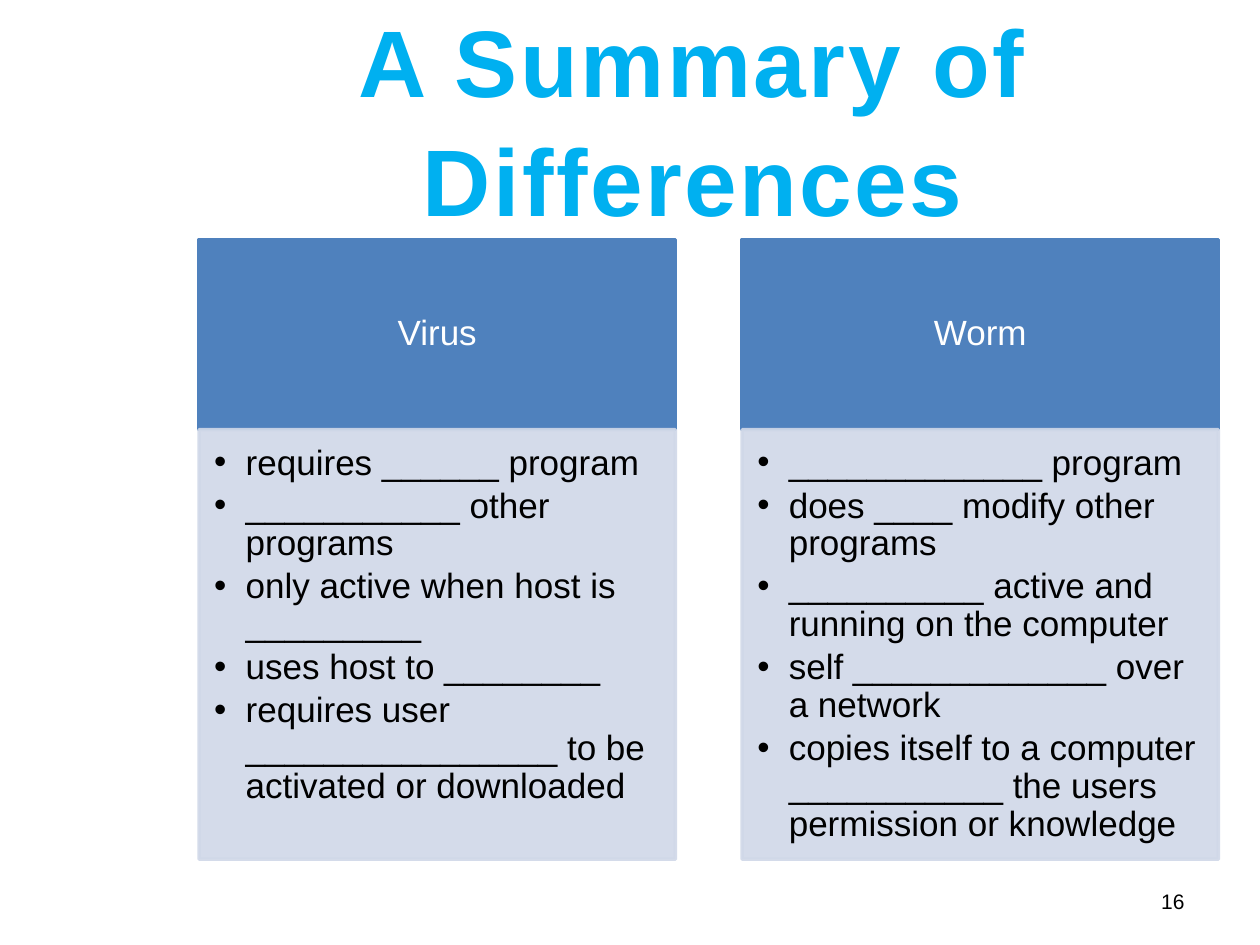
from dataclasses import dataclass

from lxml.etree import SubElement
from pptx import Presentation
from pptx.dml.color import RGBColor
from pptx.enum.shapes import MSO_SHAPE
from pptx.enum.text import MSO_ANCHOR, PP_ALIGN
from pptx.oxml.ns import qn
from pptx.util import Inches, Pt


@dataclass(frozen=True)
class Theme:
    font: str = "Arial"
    title_color: str = "00B0F0"
    header_fill: str = "4F81BD"
    body_fill: str = "D0D8E8"
    header_text: str = "FFFFFF"
    text: str = "000000"
    title_size: int = 54
    body_size: int = 20
    number_size: int = 12
    body_opacity: int = 90


THEME = Theme()

# Column grid, in inches
LEFT, TOP = 1.58, 1.9
COLUMN_WIDTH, COLUMN_STEP = 3.78, 4.31
HEADER_HEIGHT, BODY_HEIGHT = 1.51, 3.41

COLUMNS = [
    ("Virus", [
        "requires ______ program",
        "___________ other programs",
        "only active when host is _________",
        "uses host to ________",
        "requires user ________________ to be activated or downloaded",
    ]),
    ("Worm", [
        "_____________ program",
        "does ____ modify other programs",
        "__________ active and running on the computer",
        "self _____________ over a network",
        "copies itself to a computer ___________ the users permission or knowledge",
    ]),
]


def set_frame(box, anchor, margins):
    frame = box.text_frame
    frame.word_wrap = True
    frame.vertical_anchor = anchor
    (frame.margin_left, frame.margin_top,
     frame.margin_right, frame.margin_bottom) = map(Inches, margins)
    return frame


def add_span(para, text, size, color, bold=False):
    span = para.add_run()
    span.text = text
    span.font.name = THEME.font
    span.font.size = Pt(size)
    span.font.bold = bold
    span.font.color.rgb = RGBColor.from_string(color)
    return span


def add_label(page, area, text, size, color, align, bold=False):
    box = page.shapes.add_textbox(*map(Inches, area))
    para = set_frame(box, MSO_ANCHOR.MIDDLE, (0.1, 0.05, 0.1, 0.05)).paragraphs[0]
    para.alignment = align
    return para, add_span(para, text, size, color, bold)


def set_opacity(color_format, percent):
    color = color_format.find(".//" + qn("a:srgbClr"))
    SubElement(color, qn("a:alpha")).set("val", str(percent * 1000))


def add_panel(page, area, color, opacity=100):
    panel = page.shapes.add_shape(MSO_SHAPE.RECTANGLE, *map(Inches, area))
    panel.shadow.inherit = False
    panel.fill.solid()
    panel.fill.fore_color.rgb = RGBColor.from_string(color)
    panel.line.color.rgb = RGBColor.from_string(color)
    panel.line.width = Pt(2)
    if opacity < 100:
        properties = panel.element.spPr
        for part in ("a:solidFill", "a:ln"):
            set_opacity(properties.find(qn(part)), opacity)
    return panel


def add_bullet(para):
    properties = para._p.get_or_add_pPr()
    properties.set("marL", str(Inches(0.25)))
    properties.set("indent", str(-Inches(0.25)))
    SubElement(properties, qn("a:buFont")).set("typeface", THEME.font)
    SubElement(properties, qn("a:buChar")).set("char", "•")


def add_column(page, index, heading, points):
    left = LEFT + index * COLUMN_STEP

    # Heading panel
    header = add_panel(page, (left, TOP, COLUMN_WIDTH, HEADER_HEIGHT), THEME.header_fill)
    para = set_frame(header, MSO_ANCHOR.MIDDLE, (0.16, 0.09, 0.16, 0.09)).paragraphs[0]
    para.alignment = PP_ALIGN.CENTER
    para.line_spacing = 0.9
    add_span(para, heading, THEME.body_size, THEME.header_text)

    # Bullet panel
    body = add_panel(page, (left, TOP + HEADER_HEIGHT, COLUMN_WIDTH, BODY_HEIGHT),
                     THEME.body_fill, THEME.body_opacity)
    frame = set_frame(body, MSO_ANCHOR.TOP, (0.12, 0.12, 0.16, 0.17))
    for number, point in enumerate(points):
        para = frame.add_paragraph() if number else frame.paragraphs[0]
        para.level = 1
        para.alignment = PP_ALIGN.LEFT
        add_bullet(para)
        para.line_spacing = 0.9
        para.space_after = Pt(0.15 * THEME.body_size)
        add_span(para, point, THEME.body_size, THEME.text)


def main():
    deck = Presentation()
    deck.slide_width, deck.slide_height = Inches(10), Inches(7.5)
    page = deck.slides.add_slide(deck.slide_layouts[6])

    # Title
    para, span = add_label(page, (1.25, 0.3, 8.5, 1.25), "A Summary of Differences",
                           THEME.title_size, THEME.title_color, PP_ALIGN.CENTER, bold=True)
    para.line_spacing = 1.05
    span.font._element.set("spc", "150")

    # Comparison columns
    for index, (heading, points) in enumerate(COLUMNS):
        add_column(page, index, heading, points)

    # Slide number
    add_label(page, (7.17, 6.95, 2.33, 0.4), "16",
              THEME.number_size, THEME.text, PP_ALIGN.RIGHT)

    deck.save("out.pptx")


if __name__ == "__main__":
    main()
